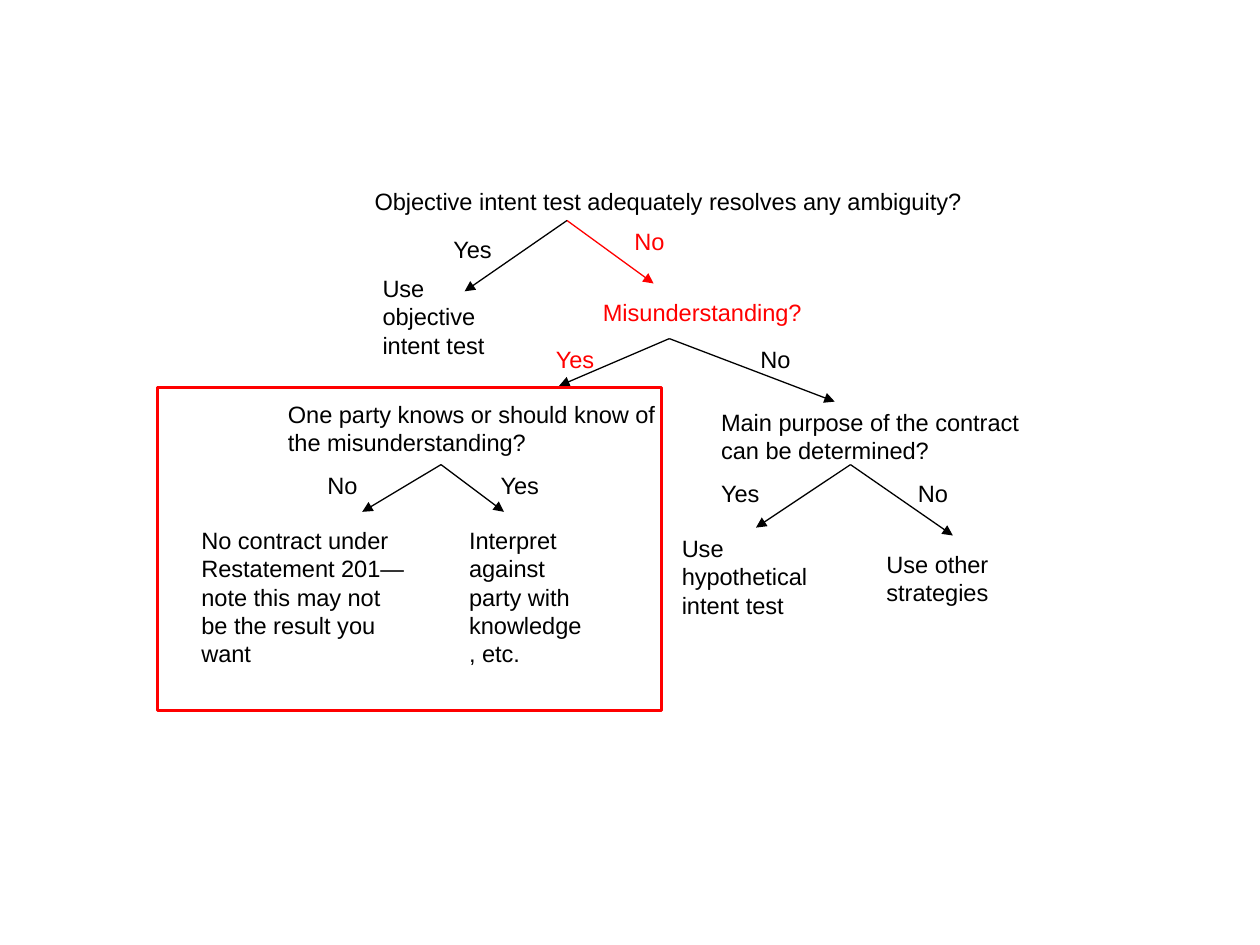
from pptx import Presentation
from pptx.dml.color import RGBColor
from pptx.enum import shapes as sh, text as tx
from pptx.util import Pt
from lxml import etree

BLACK = RGBColor(0, 0, 0)
RED = RGBColor(255, 0, 0)
NS = "http://schemas.openxmlformats.org/drawingml/2006/main"

deck = Presentation()
deck.slide_width, deck.slide_height = Pt(720), Pt(540)
slide = deck.slides.add_slide(deck.slide_layouts[6])


def label(words, left, top, width, height, color=BLACK):
    box = slide.shapes.add_textbox(Pt(left), Pt(top), Pt(width), Pt(height))
    frame = box.text_frame
    frame.word_wrap = True
    frame.auto_size = tx.MSO_AUTO_SIZE.SHAPE_TO_FIT_TEXT
    frame.text = words
    font = frame.paragraphs[0].runs[0].font
    font.name, font.size = "Arial", Pt(13.5)
    font.color.rgb = color


def arrow(start, end, color=BLACK):
    line = slide.shapes.add_connector(
        sh.MSO_CONNECTOR.STRAIGHT, *[Pt(v) for v in start + end])
    line.line.color.rgb = color
    line.line.width = Pt(0.75)
    tip = etree.SubElement(line.line._get_or_add_ln(), f"{{{NS}}}tailEnd")
    tip.set("type", "triangle")
    etree.SubElement(line._element.spPr, f"{{{NS}}}effectLst")


# Questions and outcomes: text, left, top, width, lines, color
nodes = [
    ("Objective intent test adequately resolves any ambiguity?",
     207, 103.5, 373.5, 1, BLACK),
    ("Misunderstanding?", 337.5, 166.5, 144, 1, RED),
    ("One party knows or should know of the misunderstanding?",
     157.5, 225, 225, 2, BLACK),
    ("No contract under Restatement 201—note this may not be the result "
     "you want", 108, 297, 135, 5, BLACK),
    ("Interpret against party with knowledge, etc.",
     261, 297, 81, 5, BLACK),
    ("Main purpose of the contract can be determined?",
     405, 229.5, 189, 2, BLACK),
    ("Use hypothetical intent test", 382.5, 301.5, 99, 3, BLACK),
    ("Use other strategies", 499.5, 310.5, 81, 2, BLACK),
    ("Use objective intent test", 211.5, 153, 90, 3, BLACK),
]
for words, left, top, width, lines, color in nodes:
    label(words, left, top, width, 7.4 + 16.35 * lines, color)

# Branches: fork point, then the end and color of each arrow
forks = [
    ((324, 126), ((265.5, 166.5), BLACK), ((373.5, 162), RED)),
    ((382.5, 193.5), ((319.5, 220.5), BLACK), ((477, 229.5), BLACK)),
    ((252, 265.5), ((207, 292.5), BLACK), ((288, 292.5), BLACK)),
    ((486, 265.5), ((432, 301.5), BLACK), ((544.5, 306), BLACK)),
]
for fork, *ends in forks:
    for end, color in ends:
        arrow(fork, end, color)

# Answers on the branches
answers = [
    ("Yes", 252, 130.5, 54, BLACK), ("No", 355.5, 126, 36, RED),
    ("Yes", 310.5, 193.5, 54, RED), ("No", 427.5, 193.5, 36, BLACK),
    ("No", 180, 265.5, 54, BLACK), ("Yes", 279, 265.5, 54, BLACK),
    ("Yes", 405, 270, 54, BLACK), ("No", 517.5, 270, 36, BLACK),
]
for words, left, top, width, color in answers:
    label(words, left, top, width, 23.75, color)

# Red frame around the highlighted branch
frame = slide.shapes.add_shape(
    sh.MSO_SHAPE.RECTANGLE, Pt(90), Pt(221.5), Pt(288), Pt(184.5))
frame.shadow.inherit = False
frame.fill.background()
frame.line.color.rgb = RED
frame.line.width = Pt(2)

deck.save("out.pptx")
